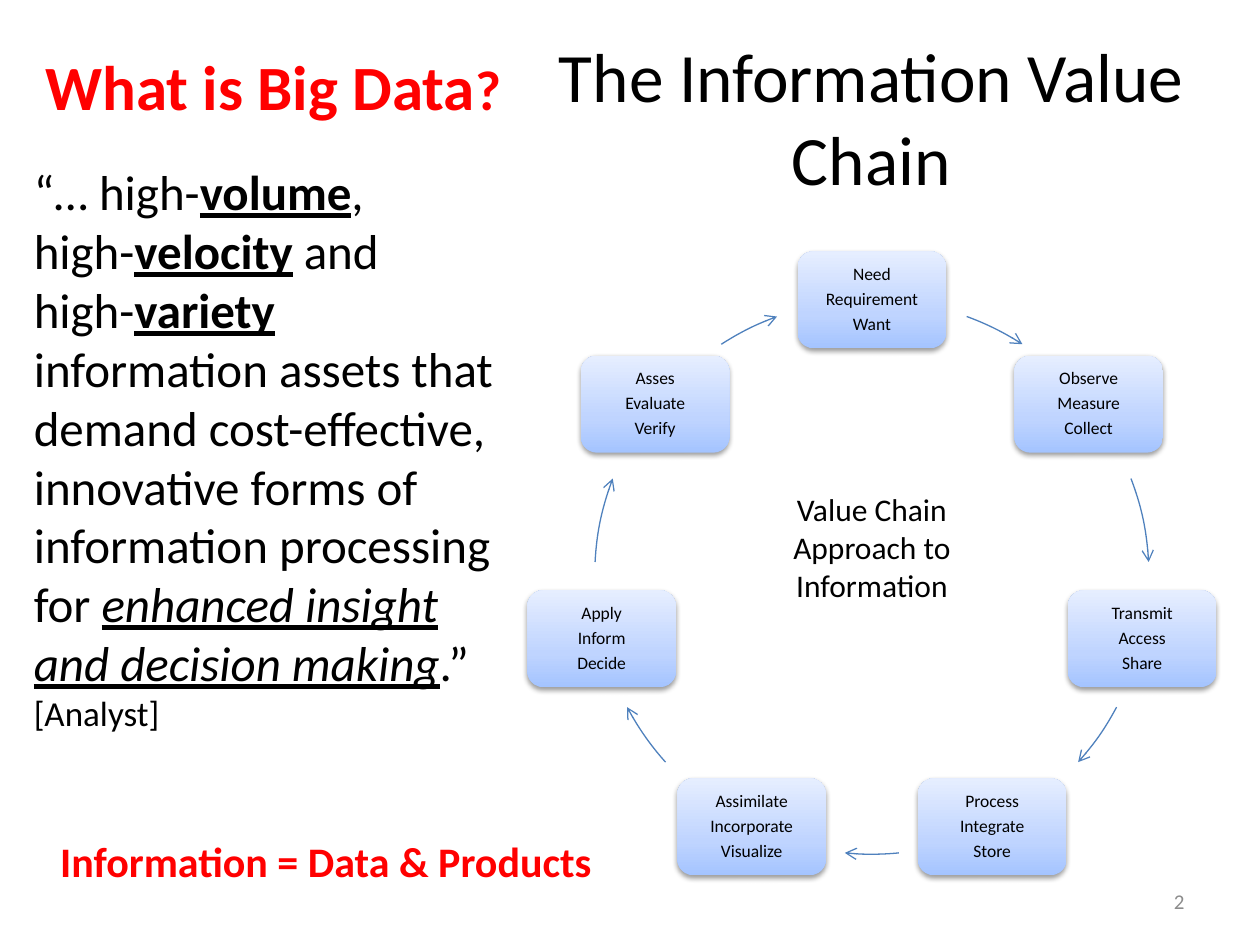
from copy import deepcopy
from dataclasses import dataclass
from math import cos, radians, sin

from pptx import Presentation
from pptx.dml.color import RGBColor
from pptx.enum.shapes import MSO_SHAPE
from pptx.enum.text import MSO_ANCHOR, MSO_AUTO_SIZE, PP_ALIGN
from pptx.oxml import parse_xml
from pptx.oxml.ns import nsdecls, qn
from pptx.util import Inches, Pt

BLACK = RGBColor(0x00, 0x00, 0x00)
RED = RGBColor(0xFF, 0x00, 0x00)
GREY = RGBColor(0x8C, 0x8C, 0x8C)
ARROW_BLUE = RGBColor(0x4F, 0x81, 0xBD)
BOX_GRADIENT = [
    (0, RGBColor(0xA4, 0xC4, 0xFF)),
    (0.35, RGBColor(0xBF, 0xD4, 0xFF)),
    (1, RGBColor(0xE6, 0xEE, 0xFF)),
]
FONT = "Calibri"

# Ring geometry in inches
CENTER_X, CENTER_Y, RADIUS = 6.92, 4.58, 2.2
BOX_W, BOX_H = 1.18, 0.77


@dataclass
class Stage:
    """A box on the ring and the arrow that leaves it, in degrees clockwise from the top."""
    words: tuple[str, ...]
    arrow_start: float
    arrow_end: float


@dataclass
class Span:
    text: str
    bold: bool = False
    italic: bool = False
    underline: bool = False
    size: float | None = None


STAGES = [
    Stage(("Need", "Requirement", "Want"), 20, 32.9),
    Stage(("Observe", "Measure", "Collect"), 69.2, 86.9),
    Stage(("Transmit", "Access", "Share"), 118, 131.9),
    Stage(("Process", "Integrate", "Store"), 174.4, 185.6),
    Stage(("Assimilate", "Incorporate", "Visualize"), 228.1, 242),
    Stage(("Apply", "Inform", "Decide"), 273.1, 290.8),
    Stage(("Asses", "Evaluate", "Verify"), 327.1, 340),
]

DEFINITION = [
    [Span("“… high-"), Span("volume", bold=True, underline=True), Span(",")],
    [Span("high-"), Span("velocity", bold=True, underline=True), Span(" and")],
    [
        Span("high-"),
        Span("variety", bold=True, underline=True),
        Span(" information assets that demand cost-effective, innovative forms of "
             "information processing for "),
        Span("enhanced insight and decision making", italic=True, underline=True),
        Span(".” "),
        Span("[Analyst]", size=20),
    ],
]


def style(p, size: float, color: RGBColor = BLACK, bold: bool = False,
          align: PP_ALIGN = PP_ALIGN.LEFT) -> None:
    p.alignment = align
    p.font.name = FONT
    p.font.size = Pt(size)
    p.font.bold = bold
    p.font.color.rgb = color


def add_spans(p, spans: list[Span]) -> None:
    for span in spans:
        r = p.add_run()
        r.text = span.text
        if span.bold:
            r.font.bold = True
        if span.italic:
            r.font.italic = True
        if span.underline:
            r.font.underline = True
        if span.size:
            r.font.size = Pt(span.size)


def add_text_box(slide, x: float, y: float, w: float, h: float, text: str = ""):
    tf = slide.shapes.add_textbox(Inches(x), Inches(y), Inches(w), Inches(h)).text_frame
    tf.word_wrap = True
    tf.text = text
    return tf


def add_stage_box(slide, stage: Stage, bearing: float) -> None:
    x = CENTER_X + RADIUS * sin(radians(bearing)) - BOX_W / 2
    y = CENTER_Y - RADIUS * cos(radians(bearing)) - BOX_H / 2
    s = slide.shapes.add_shape(MSO_SHAPE.ROUNDED_RECTANGLE,
                               Inches(x), Inches(y), Inches(BOX_W), Inches(BOX_H))
    s.line.fill.background()

    # Three-stop gradient, darkest at the bottom
    s.fill.gradient()
    s.fill.gradient_angle = 90
    sp_pr = s.element.spPr
    stop_list = sp_pr.find(qn("a:gradFill")).find(qn("a:gsLst"))
    stop_list.append(deepcopy(stop_list[-1]))
    for stop, (position, color) in zip(s.fill.gradient_stops, BOX_GRADIENT):
        stop.position = position
        stop.color.rgb = color

    # Soft shadow below
    sp_pr.append(parse_xml(
        f'<a:effectLst {nsdecls("a")}>'
        f'<a:outerShdw blurRad="{Pt(3.1)}" dist="{Pt(1.6)}" dir="5400000" rotWithShape="0">'
        '<a:srgbClr val="000000"><a:alpha val="38000"/></a:srgbClr>'
        '</a:outerShdw></a:effectLst>'))

    tf = s.text_frame
    tf.word_wrap = True
    tf.vertical_anchor = MSO_ANCHOR.MIDDLE
    tf.margin_left = tf.margin_right = Inches(0.08)
    tf.margin_top = tf.margin_bottom = Inches(0.08)
    tf.text = "\n".join(stage.words)
    for p in tf.paragraphs:
        style(p, 10, align=PP_ALIGN.CENTER)
        p.line_spacing = 0.9
        p.space_after = Pt(3.5)


def add_ring_arrow(slide, stage: Stage) -> None:
    s = slide.shapes.add_shape(MSO_SHAPE.ARC,
                               Inches(CENTER_X - RADIUS), Inches(CENTER_Y - RADIUS),
                               Inches(2 * RADIUS), Inches(2 * RADIUS))
    # Arc angles run from the right; 0.6 adjustment units make one degree
    for i, bearing in enumerate((stage.arrow_start, stage.arrow_end)):
        s.adjustments[i] = (bearing - 90) % 360 * 0.6
    s.shadow.inherit = False
    s.fill.background()
    s.line.color.rgb = ARROW_BLUE
    s.line.width = Pt(0.75)
    line = s.element.spPr.find(qn("a:ln"))
    line.append(parse_xml(f'<a:tailEnd {nsdecls("a")} type="arrow"/>'))


def main() -> None:
    prs = Presentation()
    prs.slide_width, prs.slide_height = Inches(10), Inches(7.5)
    slide = prs.slides.add_slide(prs.slide_layouts[5])

    # Title
    title = slide.shapes.title
    title.left, title.top = Inches(4.33), Inches(0.3)
    title.width, title.height = Inches(5.17), Inches(1.25)
    tf = title.text_frame
    tf.text = "The Information Value Chain"
    tf.auto_size = MSO_AUTO_SIZE.NONE
    tf.vertical_anchor = MSO_ANCHOR.MIDDLE
    style(tf.paragraphs[0], 39.6, align=PP_ALIGN.CENTER)

    # Value chain ring
    for i, stage in enumerate(STAGES):
        add_stage_box(slide, stage, i * 360 / len(STAGES))
        add_ring_arrow(slide, stage)
    tf = add_text_box(slide, 5.92, 3.84, 2, 1.01, "Value Chain Approach to Information")
    style(tf.paragraphs[0], 18, align=PP_ALIGN.CENTER)

    # Big data definition
    tf = add_text_box(slide, 0.17, 0.33, 4, 5.59)
    heading = tf.paragraphs[0]
    style(heading, 36, RED, bold=True, align=PP_ALIGN.CENTER)
    add_spans(heading, [Span("What is Big Data"), Span("?", size=32)])
    heading.space_after = Pt(22)
    for spans in DEFINITION:
        p = tf.add_paragraph()
        style(p, 28)
        add_spans(p, spans)

    # Conclusion
    tf = add_text_box(slide, 0.38, 6.58, 4.67, 0.5, "Information = Data & Products")
    style(tf.paragraphs[0], 24, RED, bold=True)

    # Slide number
    tf = add_text_box(slide, 7.17, 6.95, 2.33, 0.4, "2")
    tf.vertical_anchor = MSO_ANCHOR.MIDDLE
    style(tf.paragraphs[0], 12, GREY, align=PP_ALIGN.RIGHT)

    prs.save("out.pptx")


if __name__ == "__main__":
    main()
